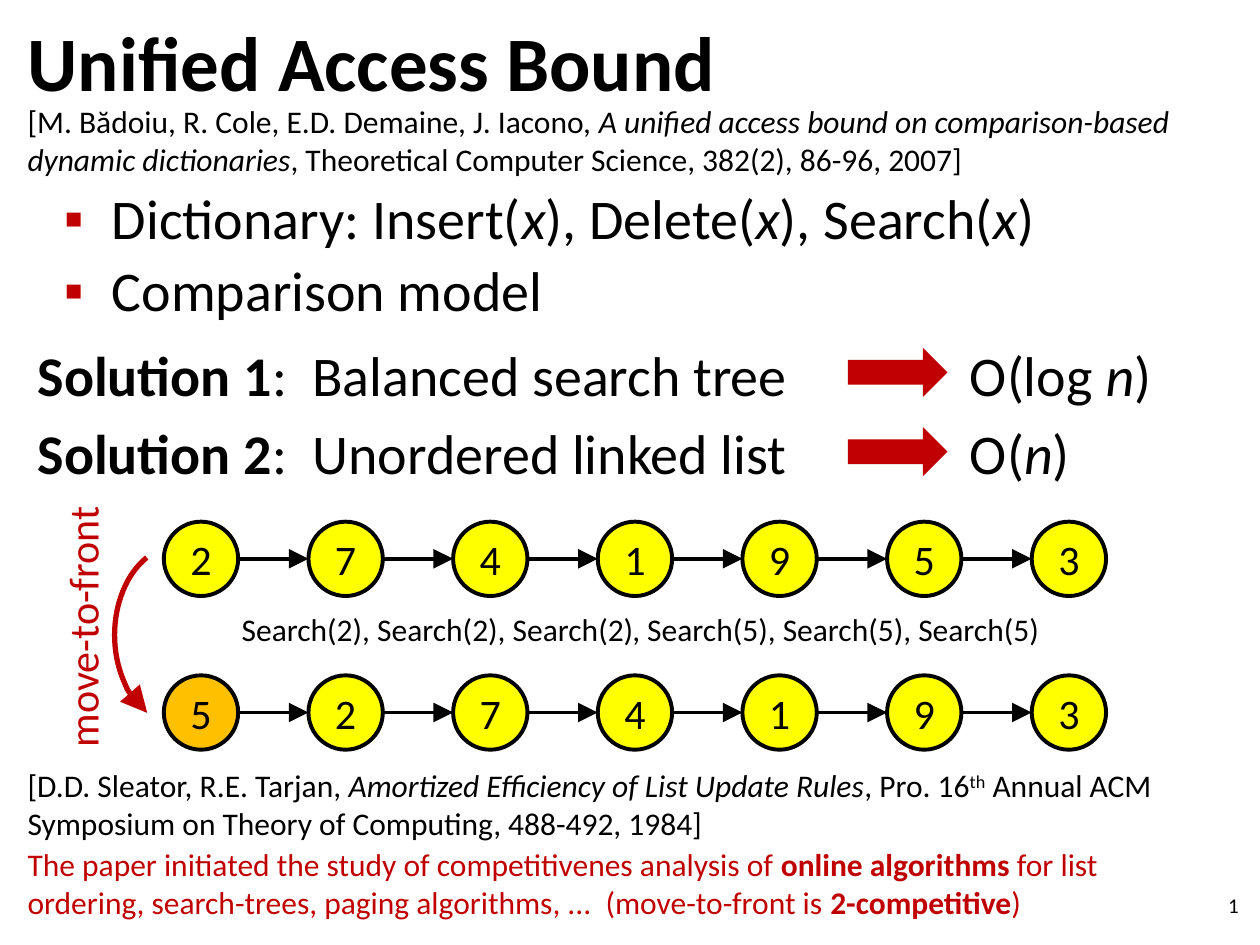
from lxml import etree
from pptx import Presentation
from pptx.dml.color import RGBColor
from pptx.enum.shapes import MSO_CONNECTOR, MSO_SHAPE
from pptx.enum.text import MSO_ANCHOR, PP_ALIGN
from pptx.oxml.ns import qn
from pptx.util import Inches, Pt

STRAIGHT = MSO_CONNECTOR.STRAIGHT
OVAL, ARROW, ARC = MSO_SHAPE.OVAL, MSO_SHAPE.RIGHT_ARROW, MSO_SHAPE.ARC
LEFT, CENTER, RIGHT = PP_ALIGN.LEFT, PP_ALIGN.CENTER, PP_ALIGN.RIGHT
TOP, MIDDLE = MSO_ANCHOR.TOP, MSO_ANCHOR.MIDDLE
BLACK, RED, YELLOW, ORANGE = "000000", "C00000", "FFFF00", "FFC000"
rgb = RGBColor.from_string


def write(sp, paragraphs, size, color=BLACK, align=LEFT, anchor=TOP, **spacing):
    """Fill a shape with paragraphs, each a list of (text, font format) runs."""
    tf = sp.text_frame
    tf.word_wrap = True
    tf.vertical_anchor = anchor
    for i, runs in enumerate(paragraphs):
        p = tf.add_paragraph() if i else tf.paragraphs[0]
        p.alignment = align
        for name, value in spacing.items():
            setattr(p, name, value)
        for text, extra in runs:
            r = p.add_run()
            r.text = text
            r.font.color.rgb = rgb(color)
            for name, value in {"name": "Calibri", "size": Pt(size), **extra}.items():
                setattr(r.font, name, value)


def style_line(sp, color, width, end=None):
    """Set the outline, and a large arrowhead at headEnd or tailEnd."""
    sp.line.color.rgb = rgb(color)
    sp.line.width = Pt(width)
    if end:
        etree.SubElement(sp.line._get_or_add_ln(), qn("a:" + end),
                         type="triangle", w="lg", len="lg")


prs = Presentation()
prs.slide_width, prs.slide_height = Inches(10), Inches(7.5)
s = prs.slides.add_slide(prs.slide_layouts[5])
bold, italic, plain = {"bold": True}, {"italic": True}, {}

# Title
title = s.shapes.title
title.left, title.top = Inches(0.12), Inches(0)
title.width, title.height = Inches(9), Inches(0.96)
write(title, [[("Unified Access Bound", bold)]], 44, anchor=MIDDLE)

# Text boxes: position, paragraphs, size, format
var = ("x", italic)
spaced = {"space_before": Pt(6.4)}
texts = {
    "number": ((7.6, 6.98, 2.33, 0.4), [[("1", plain)]], 12,
               {"align": RIGHT, "anchor": MIDDLE}),
    "reference": ((0.12, 0.76, 9.72, 0.71), [[
        ("[M. Bădoiu, R. Cole, E.D. Demaine, J. Iacono, ", plain),
        ("A unified access bound on comparison-based dynamic dictionaries", italic),
        (", Theoretical Computer Science, 382(2), 86-96, 2007]", plain)]], 18, {}),
    "bullets": ((0.41, 1.47, 9, 1.26), [
        [("Dictionary: Insert(", plain), var, ("), Delete(", plain), var,
         ("), Search(", plain), var, (")", plain)],
        [("Comparison model", plain)]], 32, {"line_spacing": 0.9, **spaced}),
    "solutions": ((0.2, 2.65, 6.61, 1.53), [
        [("Solution 1", bold), (":  Balanced search tree", plain)],
        [("Solution 2", bold), (":  Unordered linked list", plain)]], 32, spaced),
    "costs": ((7.6, 2.65, 1.73, 1.53), [
        [("O(log ", plain), ("n", italic), (")", plain)],
        [("O(", plain), ("n", italic), (")", plain)]], 32, spaced),
    "searches for 2": ((1.82, 4.79, 3.7, 0.4),
                       [[("Search(2), Search(2), Search(2)", plain)]], 18, {}),
    "searches for 5": ((4.92, 4.79, 3.7, 0.4),
                       [[(", Search(5), Search(5), Search(5)", plain)]], 18, {}),
    "move-to-front": ((0.4, 3.91, 0.5, 2.13), [[("move-to-front", plain)]], 24,
                      {"color": RED, "align": CENTER}),
    "remark": ((0.12, 6.66, 9.29, 0.71), [[
        ("The paper initiated the study of competitivenes analysis of ", plain),
        ("online algorithms ", bold),
        ("for list ordering, search-trees, paging algorithms, ...  (move-to-front is ", plain),
        ("2-competitive", bold), (")", plain)]], 18, {"color": RED}),
    "list reference": ((0.12, 6.03, 9.72, 0.71), [[
        ("[D.D. Sleator, R.E. Tarjan, ", plain),
        ("Amortized Efficiency of List Update Rules", italic), (", Pro. 16", plain),
        ("th", plain),
        (" Annual ACM Symposium on Theory of Computing, 488-492, 1984]", plain)]], 18, {}),
}
boxes = {}
for name, (place, paragraphs, size, fmt) in texts.items():
    boxes[name] = s.shapes.add_textbox(*map(Inches, place))
    write(boxes[name], paragraphs, size, **fmt)

# Upward text beside the curved arrow
upward = boxes["move-to-front"].text_frame
upward._txBody.bodyPr.set("vert", "vert270")
upward.margin_left = upward.margin_right = Inches(0.05)
upward.margin_top = upward.margin_bottom = Inches(0.1)

# Superscript in "16th"
ordinal = boxes["list reference"].text_frame.paragraphs[0].runs[3]
ordinal.font._element.set("baseline", "30000")

# Red square bullets
for p in boxes["bullets"].text_frame.paragraphs:
    pPr = p._p.get_or_add_pPr()
    pPr.set("marL", str(Inches(0.38)))
    pPr.set("indent", str(Inches(-0.38)))
    bullet_color = etree.SubElement(pPr, qn("a:buClr"))
    etree.SubElement(bullet_color, qn("a:srgbClr"), val=RED)
    etree.SubElement(pPr, qn("a:buFont"), typeface="Arial")
    etree.SubElement(pPr, qn("a:buChar"), char="▪")

# Block arrows from solutions to costs
for top in (2.76, 3.39):
    arrow = s.shapes.add_shape(ARROW, Inches(6.73), Inches(top), Inches(0.79), Inches(0.39))
    arrow.shadow.inherit = False
    arrow.fill.solid()
    arrow.fill.fore_color.rgb = rgb(RED)
    arrow.line.fill.background()

# Linked lists before and after the searches
first_left, pitch, diameter = 1.3, 1.148, 0.59
for top, keys, first_fill in ((4.14, "2741953", YELLOW), (5.36, "5274193", ORANGE)):
    linked_list = s.shapes.add_group_shape()
    middle = Inches(top + diameter / 2)
    for i, key in enumerate(keys):
        left = first_left + i * pitch
        node = linked_list.shapes.add_shape(
            OVAL, Inches(left), Inches(top), Inches(diameter), Inches(diameter))
        node.shadow.inherit = False
        node.fill.solid()
        node.fill.fore_color.rgb = rgb(YELLOW if i else first_fill)
        style_line(node, BLACK, 2.25)
        write(node, [[(key, plain)]], 24, align=CENTER, anchor=MIDDLE)
        if i:
            link = linked_list.shapes.add_connector(
                STRAIGHT, Inches(left - pitch + diameter), middle, Inches(left), middle)
            style_line(link, BLACK, 2.25, "tailEnd")
            etree.SubElement(link._element.spPr, qn("a:effectLst"))

# Curved move-to-front arrow
curve = s.shapes.add_shape(ARC, Inches(0.91), Inches(4.33), Inches(1.02), Inches(1.42))
curve.adjustments[0], curve.adjustments[1] = 67.26, 148.48
curve.shadow.inherit = False
curve.fill.background()
style_line(curve, RED, 3, "headEnd")

prs.save("out.pptx")
